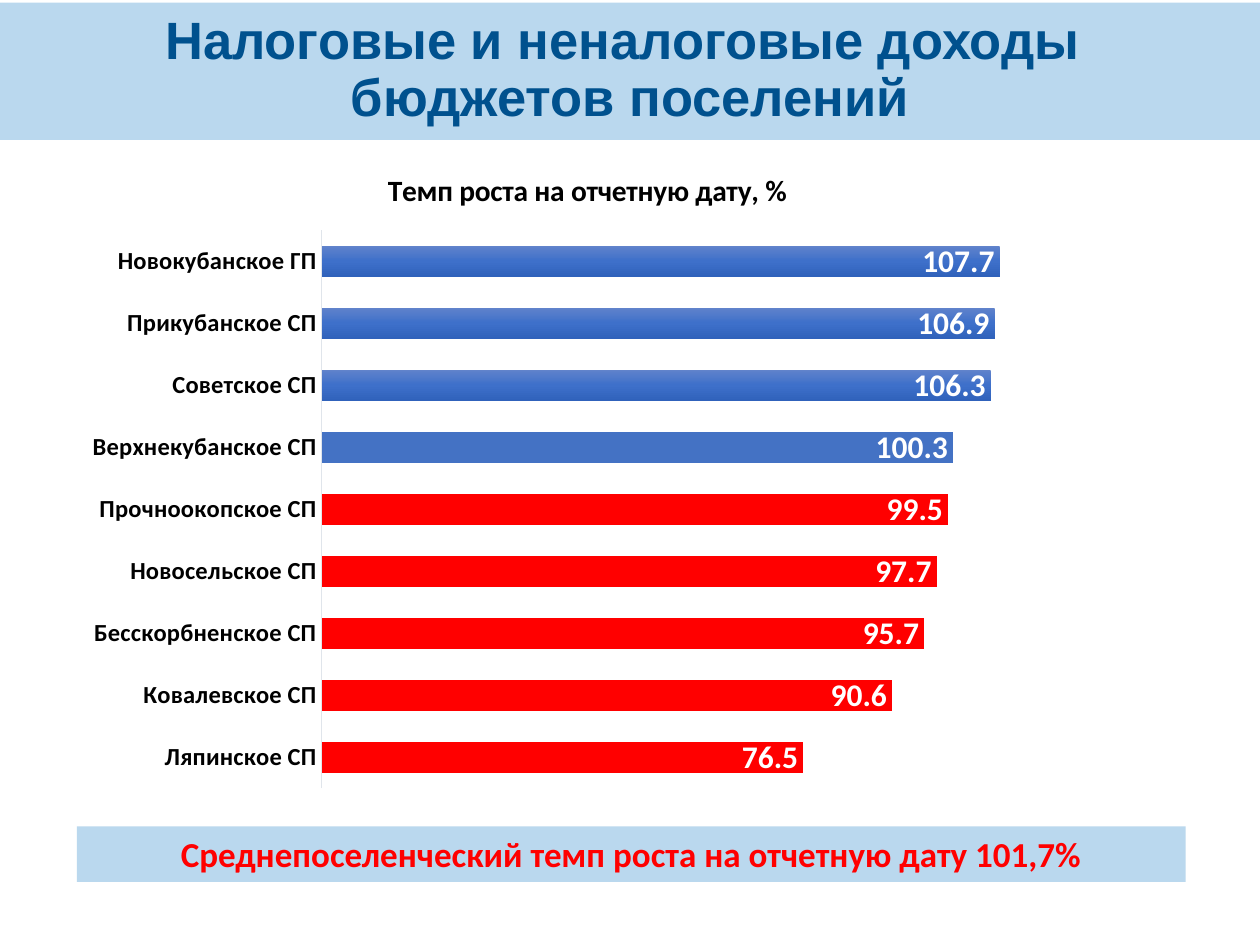
import pptx
import pptx.chart.data
import pptx.dml.color
import pptx.enum.chart
import pptx.enum.shapes
import pptx.enum.text
import pptx.util
from pptx.oxml import parse_xml
from pptx.oxml.ns import nsdecls

Inches, Pt = pptx.util.Inches, pptx.util.Pt
RGBColor = pptx.dml.color.RGBColor

# Content
TITLE_LINES = ["Налоговые и неналоговые доходы ", "бюджетов поселений"]
CHART_TITLE = "Темп роста на отчетную дату, %"
SUMMARY = "Среднепоселенческий темп роста на отчетную дату 101,7%"
GROWTH = [
    ("Новокубанское ГП", 107.7),
    ("Прикубанское СП", 106.9),
    ("Советское СП", 106.3),
    ("Верхнекубанское СП", 100.3),
    ("Прочноокопское СП", 99.5),
    ("Новосельское СП", 97.7),
    ("Бесскорбненское СП", 95.7),
    ("Ковалевское СП", 90.6),
    ("Ляпинское СП", 76.5),
]
PLAIN_BLUE_BAR = 3
TARGET = 100

# Colours
PALE_BLUE = RGBColor(0xBA, 0xD8, 0xEE)
DARK_BLUE = RGBColor(0x00, 0x51, 0x8E)
BAR_BLUE = RGBColor(0x44, 0x72, 0xC4)
RED = RGBColor(0xFF, 0x00, 0x00)
BLACK = RGBColor(0x00, 0x00, 0x00)
WHITE = RGBColor(0xFF, 0xFF, 0xFF)
AXIS_GREY = RGBColor(0xE0, 0xE5, 0xEB)
BAR_GRADIENT = [(0, "6183CB"), (50, "3E70CA"), (100, "3062BB")]

# Plot area as fractions of the chart: left, top, width, height
PLOT_AREA = {"x": 0.24, "y": 0.13, "w": 0.74, "h": 0.85}


def set_font(font, size, color, name="Calibri"):
    font.name, font.size, font.bold = name, Pt(size), True
    font.color.rgb = color


def fill_solid(target, color):
    target.fill.solid()
    target.fill.fore_color.rgb = color


def place(shape, left, top, width, height):
    shape.left, shape.top = Inches(left), Inches(top)
    shape.width, shape.height = Inches(width), Inches(height)


deck = pptx.Presentation()
deck.slide_width, deck.slide_height = Inches(10), Inches(7.5)
page = deck.slides.add_slide(deck.slide_layouts[5])

# Title band
title = page.shapes.title
place(title, 0, 0.02, 10, 1.09)
fill_solid(title, PALE_BLUE)
title.text_frame.vertical_anchor = pptx.enum.text.MSO_ANCHOR.MIDDLE
title.text_frame.auto_size = pptx.enum.text.MSO_AUTO_SIZE.NONE
para = title.text_frame.paragraphs[0]
para.alignment = pptx.enum.text.PP_ALIGN.CENTER
para.line_spacing = 0.9
for index, line in enumerate(TITLE_LINES):
    if index:
        para.add_line_break()
    span = para.add_run()
    span.text = line
    set_font(span.font, 30, DARK_BLUE, "Arial")

# Growth chart
data = pptx.chart.data.CategoryChartData(number_format="0.0")
data.categories = [name for name, _ in GROWTH]
data.add_series(CHART_TITLE, [value for _, value in GROWTH])
chart = page.shapes.add_chart(
    pptx.enum.chart.XL_CHART_TYPE.BAR_CLUSTERED,
    Inches(0.61), Inches(1.15), Inches(8.1), Inches(5.21), data).chart
set_font(chart.font, 14, BLACK)
chart.has_legend = False
chart.has_title = True
span = chart.chart_title.text_frame.paragraphs[0].add_run()
span.text = CHART_TITLE
set_font(span.font, 16.8, BLACK)
chart.chart_title.include_in_layout = False

names = chart.category_axis
names.reverse_order = True
names.major_tick_mark = pptx.enum.chart.XL_TICK_MARK.NONE
names.format.line.color.rgb = AXIS_GREY
names.format.line.width = Pt(0.75)
set_font(names.tick_labels.font, 14, BLACK)

values = chart.value_axis
values.minimum_scale, values.maximum_scale = 0, 120
values.has_major_gridlines = False
values.visible = False

plot_xml = chart.plots[0]._element.getparent()
for old_layout in plot_xml.findall("{*}layout"):
    plot_xml.remove(old_layout)
sizes = "".join(f'<c:{key} val="{part}"/>' for key, part in PLOT_AREA.items())
plot_xml.insert(0, parse_xml(
    f'<c:layout {nsdecls("c")}><c:manualLayout><c:layoutTarget val="inner"/>'
    f'<c:xMode val="edge"/><c:yMode val="edge"/>{sizes}'
    '</c:manualLayout></c:layout>'))

# Bars: gradient by default, red below the target
plot = chart.plots[0]
plot.gap_width = 100
plot.vary_by_categories = False
series = plot.series[0]
series.invert_if_negative = False
stops = "".join(f'<a:gs pos="{at * 1000}"><a:srgbClr val="{color}"/></a:gs>'
                for at, color in BAR_GRADIENT)
series.format.fill.background()
bar_xml = series._element.spPr
bar_xml.replace(bar_xml.find("{*}noFill"), parse_xml(
    f'<a:gradFill {nsdecls("a")}><a:gsLst>{stops}</a:gsLst>'
    '<a:lin ang="5400000" scaled="0"/></a:gradFill>'))
for index, (_, value) in enumerate(GROWTH):
    if value < TARGET:
        fill_solid(series.points[index].format, RED)
    elif index == PLAIN_BLUE_BAR:
        fill_solid(series.points[index].format, BAR_BLUE)

labels = series.data_labels
labels.show_value = True
labels.position = pptx.enum.chart.XL_LABEL_POSITION.INSIDE_END
labels.number_format, labels.number_format_is_linked = "0.0", False
set_font(labels.font, 18, WHITE)

# Summary band
box = page.shapes.add_shape(pptx.enum.shapes.MSO_SHAPE.RECTANGLE,
                            Inches(0.61), Inches(6.56), Inches(8.8), Inches(0.44))
box.shadow.inherit = False
fill_solid(box, PALE_BLUE)
box.line.fill.background()
box.text_frame.word_wrap = True
box.text_frame.auto_size = pptx.enum.text.MSO_AUTO_SIZE.SHAPE_TO_FIT_TEXT
box.text_frame.vertical_anchor = pptx.enum.text.MSO_ANCHOR.TOP
para = box.text_frame.paragraphs[0]
para.alignment = pptx.enum.text.PP_ALIGN.CENTER
span = para.add_run()
span.text = SUMMARY
set_font(span.font, 20, RED)

deck.save("out.pptx")
